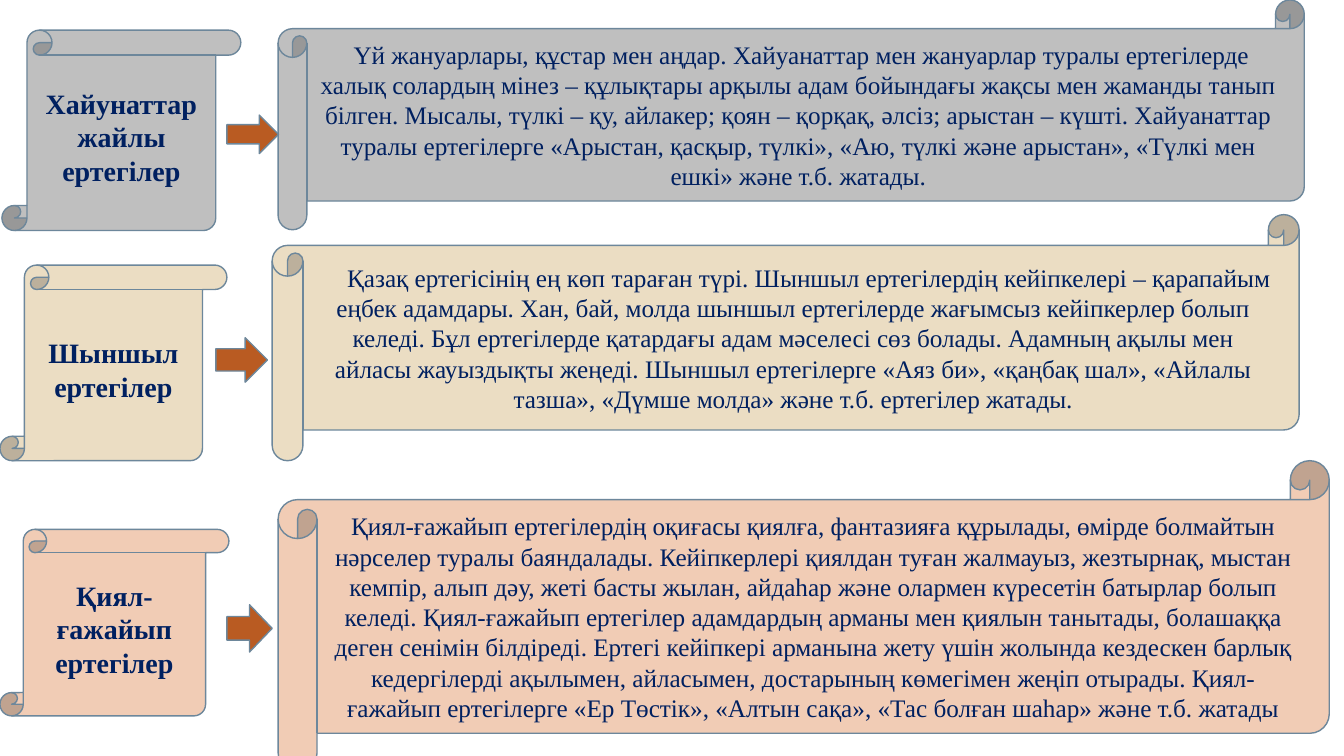
import dataclasses

import pptx
import pptx.dml.color
import pptx.enum.shapes
import pptx.enum.text
import pptx.util

Cm = pptx.util.Cm
Pt = pptx.util.Pt
RGBColor = pptx.dml.color.RGBColor
Shape = pptx.enum.shapes.MSO_SHAPE

NAVY = RGBColor(0x00, 0x20, 0x60)
OUTLINE = RGBColor(0x6D, 0x87, 0x9B)
RUST = RGBColor(0xB9, 0x5B, 0x22)
GREY = RGBColor(0xBF, 0xBF, 0xBF)
SAND = RGBColor(0xEB, 0xDD, 0xC3)
PEACH = RGBColor(0xF1, 0xCC, 0xB5)
FONT = "Times New Roman"


@dataclasses.dataclass
class Box:
    """A rectangle in centimetres."""
    left: float
    top: float
    width: float
    height: float

    def inner(self, left, top, width, height):
        return Box(self.left + left, self.top + top, width, height)


@dataclasses.dataclass
class TaleType:
    """One row; part boxes are relative to the row box."""
    colour: RGBColor
    row: Box
    heading: str
    heading_box: tuple
    arrow_box: tuple
    story: str
    story_left: float
    story_indent: float = 0


TALE_TYPES = [
    TaleType(
        GREY, Box(0, 0, 32.87, 5.79),
        "Хайунаттар жайлы ертегілер", (0.05, 0.76, 6.02, 5.05),
        (5.72, 2.9, 1.3, 0.97),
        "Үй жануарлары, құстар мен аңдар. Хайуанаттар мен жануарлар туралы "
        "ертегілерде халық солардың мінез – құлықтары арқылы адам бойындағы "
        "жақсы мен жаманды танып білген. Мысалы, түлкі – қу, айлакер; қоян – "
        "қорқақ, әлсіз; арыстан – күшті. Хайуанаттар туралы ертегілерге "
        "«Арыстан, қасқыр, түлкі», «Аю, түлкі және арыстан», «Түлкі мен ешкі» "
        "және т.б. жатады.",
        7.01, 0.16),
    TaleType(
        SAND, Box(0, 5.41, 32.74, 6.2),
        "Шыншыл ертегілер", (0, 1.27, 5.72, 4.93),
        (5.44, 3.1, 1.3, 1.12),
        "Қазақ ертегісінің ең көп тараған түрі. Шыншыл ертегілердің "
        "кейіпкелері – қарапайым еңбек адамдары. Хан, бай, молда шыншыл "
        "ертегілерде жағымсыз кейіпкерлер болып келеді. Бұл ертегілерде "
        "қатардағы адам мәселесі сөз болады. Адамның ақылы мен айласы "
        "жауыздықты жеңеді. Шыншыл ертегілерге «Аяз би», «қаңбақ шал», "
        "«Айлалы тазша», «Дүмше молда» және т.б. ертегілер жатады.",
        6.86, 0.79),
    TaleType(
        PEACH, Box(0, 11.61, 33.5, 7.85),
        "Қиял- ғажайып ертегілер", (0, 1.73, 5.77, 4.7),
        (5.72, 3.63, 1.14, 1.19),
        "Қиял-ғажайып ертегілердің оқиғасы қиялға, фантазияға құрылады, "
        "өмірде болмайтын нәрселер туралы баяндалады. Кейіпкерлері қиялдан "
        "туған жалмауыз, жезтырнақ, мыстан кемпір, алып дәу, жеті басты "
        "жылан, айдаһар және олармен күресетін батырлар болып келеді. "
        "Қиял-ғажайып ертегілер адамдардың арманы мен қиялын танытады, "
        "болашаққа деген сенімін білдіреді. Ертегі кейіпкері арманына жету "
        "үшін жолында кездескен барлық кедергілерді ақылымен, айласымен, "
        "достарының көмегімен жеңіп отырады. Қиял-ғажайып ертегілерге "
        "«Ер Төстік», «Алтын сақа», «Тас болған шаһар» және т.б. жатады",
        7.01),
]


def add_outlined(page, kind, box, colour):
    shape = page.shapes.add_shape(
        kind, Cm(box.left), Cm(box.top), Cm(box.width), Cm(box.height))
    shape.shadow.inherit = False
    shape.fill.solid()
    shape.fill.fore_color.rgb = colour
    shape.line.color.rgb = OUTLINE
    shape.line.width = Pt(1)
    return shape


def add_scroll(page, kind, box, colour, text, size, bold=False, indent=0):
    frame = add_outlined(page, kind, box, colour).text_frame
    frame.word_wrap = True
    frame.vertical_anchor = pptx.enum.text.MSO_ANCHOR.MIDDLE
    frame.text = text
    para = frame.paragraphs[0]
    para.alignment = pptx.enum.text.PP_ALIGN.CENTER
    if indent:
        properties = para._p.get_or_add_pPr()
        properties.set("marL", "0")
        properties.set("indent", str(int(Cm(indent))))
    font = para.runs[0].font
    font.name = FONT
    font.size = Pt(size)
    font.bold = bold
    font.color.rgb = NAVY


def add_tale_row(page, box, tale):
    """Place the heading scroll, the story scroll and the arrow between them."""
    add_scroll(page, Shape.VERTICAL_SCROLL, box.inner(*tale.heading_box),
               tale.colour, tale.heading, 20, bold=True)
    story_box = box.inner(tale.story_left, 0,
                          box.width - tale.story_left, box.height)
    add_scroll(page, Shape.HORIZONTAL_SCROLL, story_box,
               tale.colour, tale.story, 18, indent=tale.story_indent)
    add_outlined(page, Shape.RIGHT_ARROW, box.inner(*tale.arrow_box), RUST)


def main():
    deck = pptx.Presentation()
    deck.slide_width = Cm(33.87)
    deck.slide_height = Cm(19.05)
    page = deck.slides.add_slide(deck.slide_layouts[6])
    for tale in TALE_TYPES:
        add_tale_row(page, tale.row, tale)
    deck.save("out.pptx")


if __name__ == "__main__":
    main()
